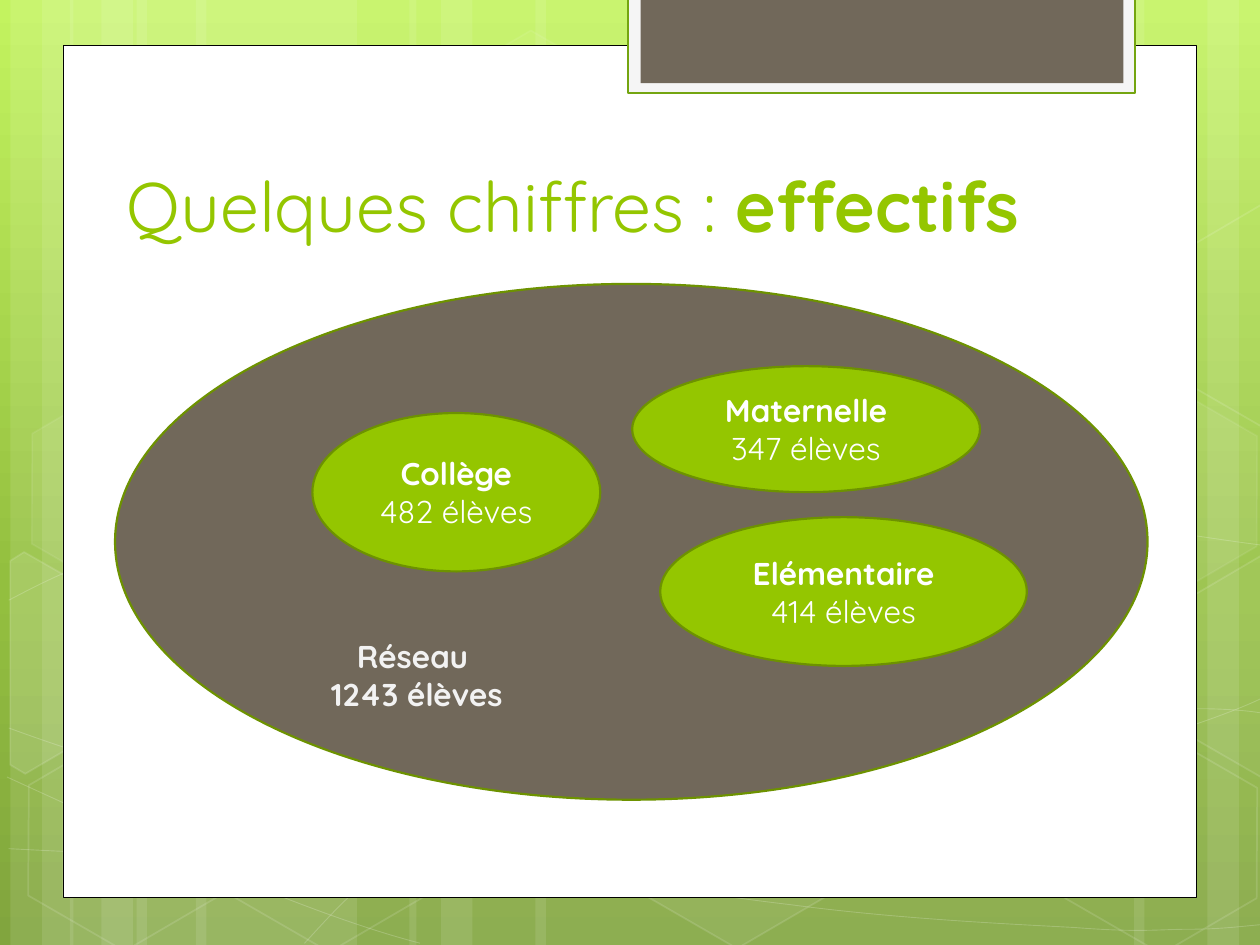
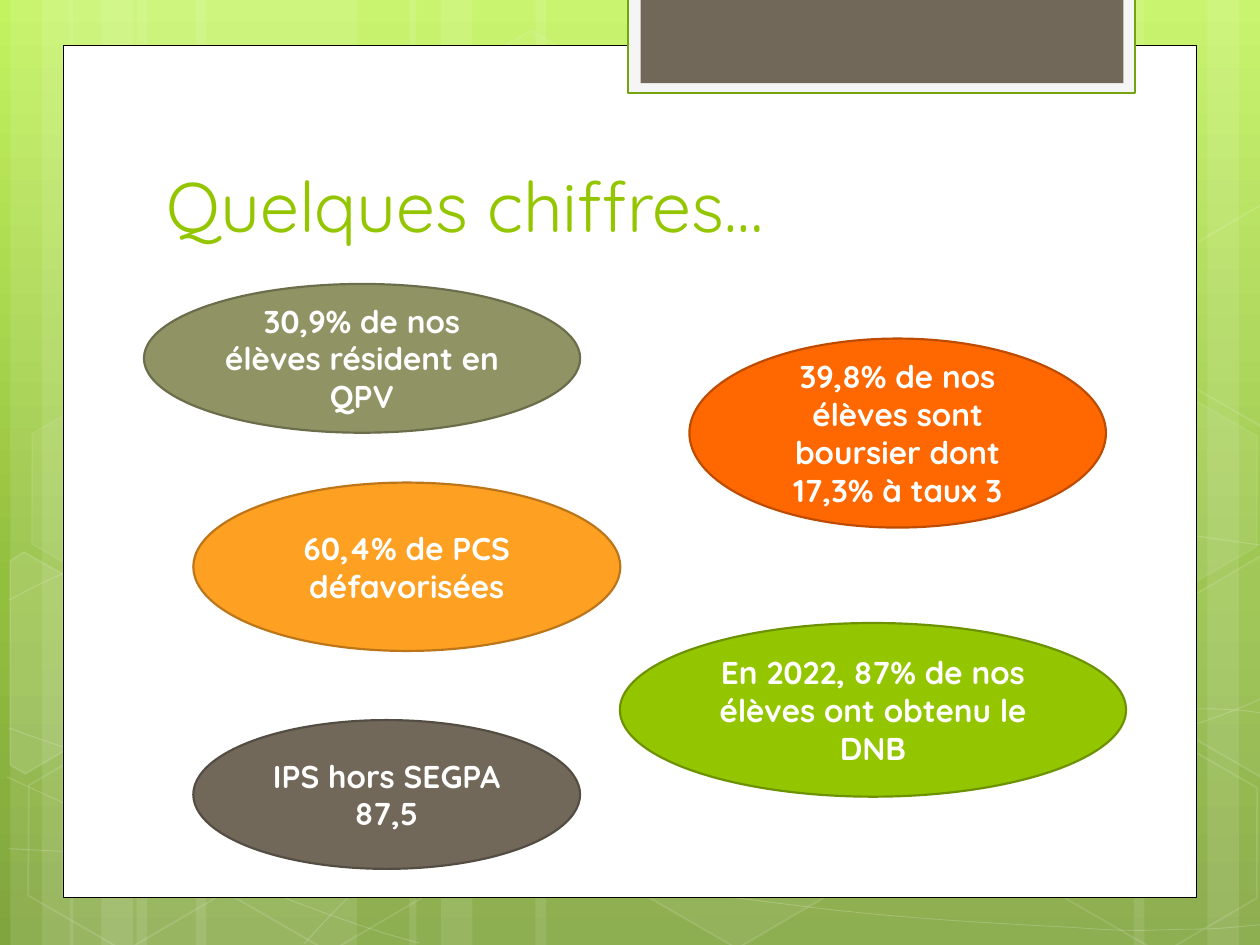
from copy import deepcopy
from dataclasses import dataclass
from math import cos, radians, sin

from pptx import Presentation
from pptx.dml.color import RGBColor
from pptx.enum.shapes import MSO_SHAPE
from pptx.enum.text import MSO_ANCHOR, PP_ALIGN
from pptx.oxml import parse_xml
from pptx.oxml.ns import nsdecls, qn
from pptx.util import Pt


@dataclass(frozen=True)
class Theme:
    font: str = "Quicksand"
    title_size: float = 40
    body_size: float = 18
    outline: float = 1.25
    hairline: float = 0.5
    tilt: float = 30
    white: str = "FFFFFF"
    black: str = "000000"
    pale: str = "F5F5F5"
    label: str = "F2F2F2"
    green: str = "94C600"
    green_edge: str = "6D9200"
    tab_edge: str = "74A510"
    taupe: str = "71685A"
    taupe_edge: str = "544D43"
    olive: str = "909465"
    olive_edge: str = "6B6D4B"
    orange: str = "FF6700"
    orange_edge: str = "BD4C00"
    amber: str = "FEA022"
    amber_edge: str = "BC7619"
    backdrop: tuple = ((0, "C3F35F"), (0.62, "93BF3F"), (1, "81A53E"))


@dataclass(frozen=True)
class Box:
    left: float
    top: float
    width: float
    height: float

    def inside(self, left, top, width, height):
        return Box(self.left + left, self.top + top, width, height)

    def lengths(self):
        return [Pt(value) for value in (self.left, self.top, self.width, self.height)]


THEME = Theme()
PAGE = Box(0, 0, 720, 540)
PANEL = PAGE.inside(36, 26, 648, 487)

STRIPES = [(78, 126), (6, 36), (24, 60), (112, 126), (40, 36), (58, 60),
           (528, 126), (690, 36), (648, 60), (306, 222), (234, 36), (252, 60)]

CURVES = [
    [(5, 485), (44, 487), (83, 489), (137, 488), (191, 487), (258, 486), (330, 479),
     (402, 472), (504, 458), (570, 444), (636, 431), (703, 409), (725, 397)],
    [(5, 343), (26, 332), (47, 321), (87, 310), (128, 300), (186, 284), (250, 279),
     (314, 274), (392, 273), (471, 279), (550, 284), (682, 307), (725, 312)],
    [(4, 444), (91, 484), (178, 523), (240, 539)],
    [(5, 416), (27, 424), (50, 432), (92, 444), (134, 454), (197, 472), (257, 485),
     (317, 497), (392, 510), (452, 517), (512, 525), (576, 528), (614, 530),
     (652, 533), (662, 531), (680, 531), (699, 531), (712, 529), (725, 528)],
    [(174, 539), (187, 525), (200, 510), (217, 498), (235, 485), (259, 470), (279, 460),
     (300, 450), (312, 446), (338, 438), (364, 431), (413, 421), (438, 416),
     (464, 411), (467, 411), (490, 410), (512, 408), (547, 405), (572, 405),
     (597, 404), (638, 405), (638, 405), (654, 405), (670, 405), (686, 405),
     (699, 405), (711, 406), (718, 407), (724, 408), (722, 407), (724, 408)],
]

HEXAGONS = [(240.5, 26, 4, 8), (358, 424, 6, 12), (8, 425.5, 0, 12), (10, 224.5, 7, 8),
            (125, 426, 0, 12), (542, 326, 10, 12), (600.5, 427, 0, 12), (600.5, 226, 7, 8)]

LEFT_SHARD = [(5.8, 320.4), (13.7, 315.4), (69.1, 347), (68.4, 410.4), (14.4, 442.1), (5.8, 437)]
RIGHT_SHARD = [(666.7, 349.2), (720.7, 317.5), (726.5, 321.1), (726.5, 441.4),
               (721.4, 444.2), (666.7, 412.6)]
SHARDS = [
    (LEFT_SHARD, (25.9, 385.2), 10),
    (RIGHT_SHARD, (709.2, 374.4), 4),
    ([(x, y - 200.5) for x, y in RIGHT_SHARD], (709.2, 173.9), 0),
]


def set_opacity(color_parent, percent):
    color = color_parent.find(qn("a:solidFill")).find(qn("a:srgbClr"))
    color.append(parse_xml(f'<a:alpha {nsdecls("a")} val="{percent * 1000}"/>'))


def paint(shape, fill=None, line=None, width=THEME.outline, fill_opacity=100, line_opacity=100):
    shape.shadow.inherit = False
    properties = shape._element.spPr
    if fill and fill_opacity:
        shape.fill.solid()
        shape.fill.fore_color.rgb = RGBColor.from_string(fill)
        if fill_opacity < 100:
            set_opacity(properties, fill_opacity)
    else:
        shape.fill.background()
    if line:
        shape.line.color.rgb = RGBColor.from_string(line)
        shape.line.width = Pt(width)
        if line_opacity < 100:
            set_opacity(properties.find(qn("a:ln")), line_opacity)
    else:
        shape.line.fill.background()


def add_preset(slide, kind, box, **look):
    shape = slide.shapes.add_shape(kind, *box.lengths())
    paint(shape, **look)
    return shape


def add_outline(slide, box, points, closed, **look):
    corners = [(Pt(box.left + x), Pt(box.top + y)) for x, y in points]
    builder = slide.shapes.build_freeform(*corners[0])
    builder.add_line_segments(corners[1:], close=closed)
    shape = builder.convert_to_shape()
    paint(shape, **look)
    return shape


def bend_segments(shape):
    outline = shape._element.spPr.find(".//" + qn("a:path"))
    segments = outline.findall(qn("a:lnTo"))
    for start in range(0, len(segments), 3):
        curve = parse_xml(f'<a:cubicBezTo {nsdecls("a")}/>')
        for segment in segments[start:start + 3]:
            curve.append(segment[0])
            outline.remove(segment)
        outline.append(curve)


def turn(points, center, degrees):
    cosine, sine = cos(radians(degrees)), sin(radians(degrees))
    middle_x, middle_y = center
    return [(middle_x + (x - middle_x) * cosine - (y - middle_y) * sine,
             middle_y + (x - middle_x) * sine + (y - middle_y) * cosine) for x, y in points]


def format_run(run, size, color, bold):
    run.font.name = THEME.font
    run.font.size = Pt(size)
    run.font.bold = bold
    run.font.color.rgb = RGBColor.from_string(color)


def write_lines(shape, lines, color, anchor):
    frame = shape.text_frame
    frame.word_wrap = True
    frame.vertical_anchor = anchor
    frame.text = "\n".join(text for text, bold in lines)
    for paragraph, (text, bold) in zip(frame.paragraphs, lines):
        paragraph.alignment = PP_ALIGN.CENTER
        format_run(paragraph.runs[0], THEME.body_size, color, bold)


def add_backdrop(slide, box):
    fill = slide.background.fill
    fill.gradient()
    stop_list = slide._element.find(".//" + qn("a:gsLst"))
    stop_list.append(deepcopy(stop_list[-1]))
    for stop, (position, color) in zip(fill.gradient_stops, THEME.backdrop):
        stop.position = position
        stop.color.rgb = RGBColor.from_string(color)
    fill.gradient_angle = 270

    for left, width in STRIPES:
        add_preset(slide, MSO_SHAPE.RECTANGLE, box.inside(left, 0, width, box.height),
                   fill=THEME.white, fill_opacity=10)
    for controls in CURVES:
        bend_segments(add_outline(slide, box, controls, False, line=THEME.white,
                                  width=THEME.hairline, line_opacity=20))
    for left, top, fill_opacity, line_opacity in HEXAGONS:
        hexagon = add_preset(slide, MSO_SHAPE.HEXAGON, box.inside(left, top, 126, 109.5),
                             fill=THEME.white, fill_opacity=fill_opacity,
                             line=THEME.white, width=1, line_opacity=line_opacity)
        hexagon.adjustments[0] = 0.285
        hexagon.rotation = THEME.tilt
    for points, center, fill_opacity in SHARDS:
        shard = add_outline(slide, box, turn(points, center, -THEME.tilt), True,
                            fill=THEME.white, fill_opacity=fill_opacity,
                            line=THEME.white, width=1, line_opacity=12)
        shard.rotation = THEME.tilt


def add_panel(slide, box):
    add_preset(slide, MSO_SHAPE.RECTANGLE, box,
               fill=THEME.white, line=THEME.black, width=THEME.hairline)
    add_preset(slide, MSO_SHAPE.RECTANGLE, box.inside(323, -27.5, 289.5, 54.5),
               fill=THEME.pale, line=THEME.tab_edge)
    add_preset(slide, MSO_SHAPE.RECTANGLE, box.inside(330, -27.5, 276, 49), fill=THEME.taupe)


def add_title(slide, box, text, emphasis=""):
    frame = slide.shapes.add_textbox(*box.lengths()).text_frame
    frame.word_wrap = True
    frame.vertical_anchor = MSO_ANCHOR.BOTTOM
    paragraph = frame.paragraphs[0]
    paragraph.text = text
    format_run(paragraph.runs[0], THEME.title_size, THEME.green, False)
    if emphasis:
        run = paragraph.add_run()
        run.text = emphasis
        format_run(run, THEME.title_size, THEME.green, True)


def add_bubble(slide, box, lines, fill, edge):
    bubble = add_preset(slide, MSO_SHAPE.OVAL, box, fill=fill, line=edge)
    write_lines(bubble, lines, THEME.white, MSO_ANCHOR.MIDDLE)


def add_framed_slide(presentation):
    slide = presentation.slides.add_slide(presentation.slide_layouts[6])
    add_backdrop(slide, PAGE)
    add_panel(slide, PANEL)
    return slide


def build_enrolment_slide(presentation, box):
    slide = add_framed_slide(presentation)
    add_preset(slide, MSO_SHAPE.OVAL, box.inside(29.75, 136.25, 590, 294.75),
               fill=THEME.taupe, line=THEME.green_edge)
    add_title(slide, box.inside(29.25, 28.5, 553, 90), "Quelques chiffres : ", "effectifs")
    schools = [
        ("Collège", "482 élèves", (142.5, 210, 164.5, 90.5)),
        ("Maternelle", "347 élèves", (325.25, 183.25, 198.75, 72)),
        ("Elémentaire", "414 élèves", (341.25, 269.5, 209.5, 85)),
    ]
    for school, pupils, place in schools:
        add_bubble(slide, box.inside(*place), [(school, True), (pupils, False)],
                   THEME.green, THEME.green_edge)
    network = slide.shapes.add_textbox(*box.inside(131.25, 334.5, 142, 51).lengths())
    write_lines(network, [("Réseau ", True), ("1243 élèves", True)],
                THEME.label, MSO_ANCHOR.TOP)


def build_indicator_slide(presentation, box):
    slide = add_framed_slide(presentation)
    add_title(slide, box.inside(52, 28.5, 553, 90), "Quelques chiffres…")
    indicators = [
        ("30,9% de nos élèves résident en QPV", (46.25, 136.25, 249.25, 85),
         THEME.olive, THEME.olive_edge),
        ("39,8% de nos élèves sont boursier dont 17,3% à taux 3", (358, 167.5, 238, 108),
         THEME.orange, THEME.orange_edge),
        ("En 2022, 87% de nos élèves ont obtenu le DNB", (318.25, 330, 289.25, 99.25),
         THEME.green, THEME.green_edge),
        ("60,4% de PCS défavorisées", (74.5, 249.75, 244, 96.25),
         THEME.amber, THEME.amber_edge),
        ("IPS hors SEGPA 87,5", (74.5, 385.5, 221, 85),
         THEME.taupe, THEME.taupe_edge),
    ]
    for text, place, fill, edge in indicators:
        add_bubble(slide, box.inside(*place), [(text, True)], fill, edge)


def main():
    presentation = Presentation()
    presentation.slide_width = Pt(PAGE.width)
    presentation.slide_height = Pt(PAGE.height)
    build_enrolment_slide(presentation, PANEL)
    build_indicator_slide(presentation, PANEL)
    presentation.save("out.pptx")


if __name__ == "__main__":
    main()
